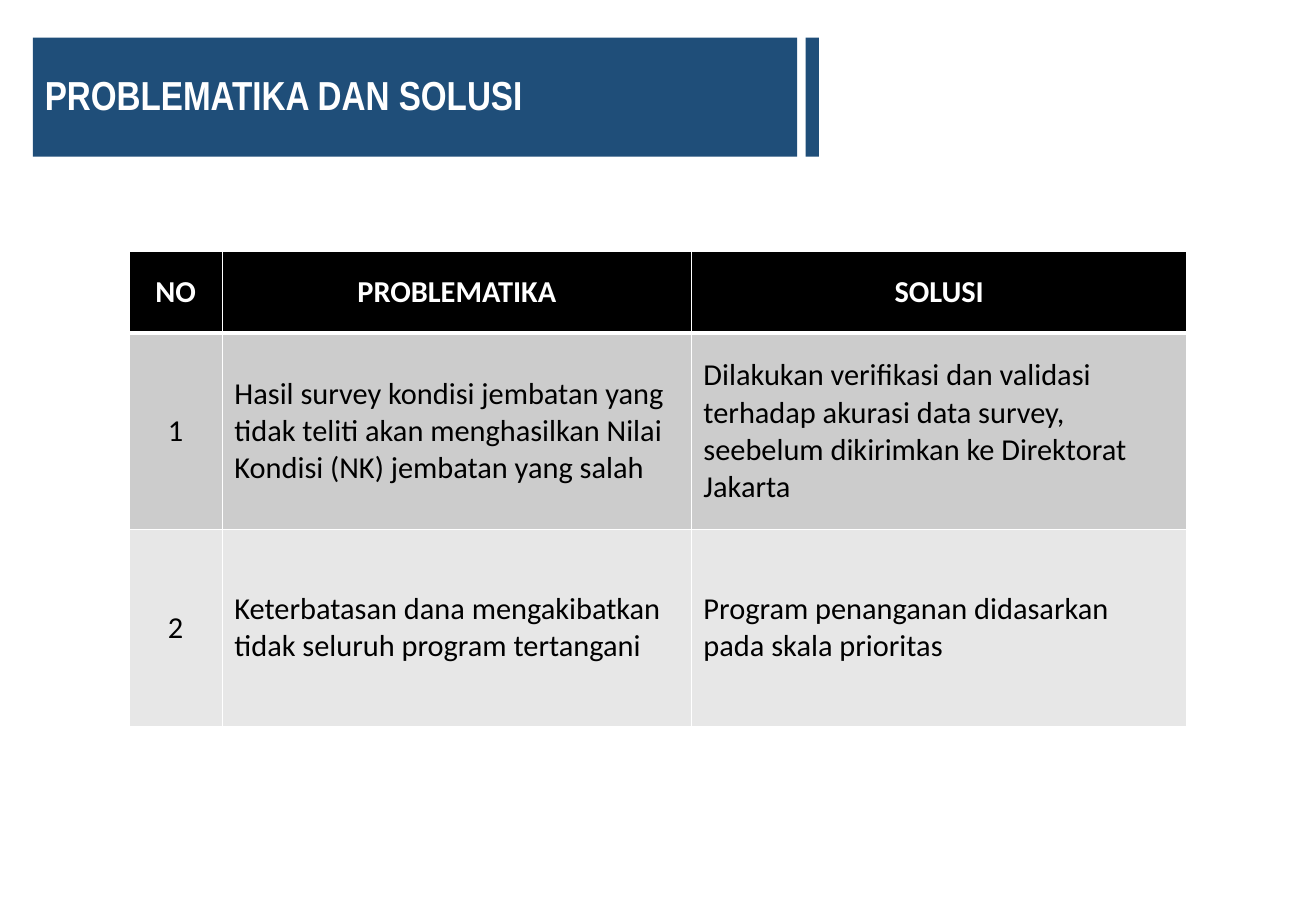
from dataclasses import dataclass

from lxml.etree import SubElement
from pptx import Presentation
from pptx.dml.color import RGBColor
from pptx.enum.shapes import MSO_SHAPE
from pptx.enum.text import MSO_ANCHOR, PP_ALIGN
from pptx.oxml.ns import qn
from pptx.util import Inches, Pt


@dataclass(frozen=True)
class Theme:
    """Colours, fonts and type sizes of the slide."""
    banner: str = "1F4E79"
    light: str = "FFFFFF"
    dark: str = "000000"
    row_fills: tuple = ("000000", "CCCCCC", "E7E7E7")
    title_font: str = "Arial Narrow"
    body_font: str = "Calibri"
    title_size: int = 24
    body_size: int = 18
    thin_line: int = 1
    header_line: int = 3


def write_text(frame, text, font, size, color, bold=False, align=PP_ALIGN.LEFT, spacing=1.0):
    """Put one formatted paragraph into a text frame."""
    frame.word_wrap = True
    para = frame.paragraphs[0]
    para.alignment = align
    para.line_spacing = spacing
    span = para.add_run()
    span.text = text
    span.font.name = font
    span.font.size = Pt(size)
    span.font.bold = bold
    span.font.color.rgb = RGBColor.from_string(color)


def draw_border(cell, side, width, color):
    """Add a solid line to one side of a table cell."""
    properties = cell._tc.get_or_add_tcPr()
    line = SubElement(properties, qn(f"a:ln{side}"), w=str(Pt(width)))
    fill = SubElement(line, qn("a:solidFill"))
    SubElement(fill, qn("a:srgbClr"), val=color)


class SlideBuilder:
    """Draws styled elements on the current slide."""

    def __init__(self, page, theme):
        """Keep the slide and its style."""
        self.page = page
        self.theme = theme

    def bar(self, left, top, width, height):
        """Draw a plain banner rectangle."""
        box = self.page.shapes.add_shape(
            MSO_SHAPE.RECTANGLE, Inches(left), Inches(top), Inches(width), Inches(height))
        box.shadow.inherit = False
        box.fill.solid()
        box.fill.fore_color.rgb = RGBColor.from_string(self.theme.banner)
        box.line.fill.background()
        return box

    def title(self, text, left, top, width, height):
        """Draw a banner that carries the title."""
        frame = self.bar(left, top, width, height).text_frame
        frame.vertical_anchor = MSO_ANCHOR.MIDDLE
        write_text(frame, text, self.theme.title_font, self.theme.title_size,
                   self.theme.light, bold=True, spacing=0.9)

    def cell(self, cell, text, row, column):
        """Style and fill one table cell."""
        theme = self.theme
        header = row == 0
        widths = {"L": theme.thin_line, "R": theme.thin_line,
                  "T": theme.header_line if row == 1 else theme.thin_line,
                  "B": theme.header_line if header else theme.thin_line}
        for side, width in widths.items():
            draw_border(cell, side, width, theme.light)
        cell.fill.solid()
        cell.fill.fore_color.rgb = RGBColor.from_string(theme.row_fills[row])
        cell.vertical_anchor = MSO_ANCHOR.MIDDLE
        centred = header or column == 0
        write_text(cell.text_frame, text, theme.body_font, theme.body_size,
                   theme.light if header else theme.dark, bold=header,
                   align=PP_ALIGN.CENTER if centred else PP_ALIGN.LEFT)

    def table(self, rows, left, top, widths, heights):
        """Draw a table with a header row."""
        table = self.page.shapes.add_table(
            len(heights), len(widths), Inches(left), Inches(top),
            Inches(sum(widths)), Inches(sum(heights))).table
        for column, width in zip(table.columns, widths):
            column.width = Inches(width)
        for line, height in zip(table.rows, heights):
            line.height = Inches(height)
        for row, texts in enumerate(rows):
            for column, text in enumerate(texts):
                self.cell(table.cell(row, column), text, row, column)


ROWS = [
    ("NO", "PROBLEMATIKA", "SOLUSI"),
    ("1",
     "Hasil survey kondisi jembatan yang tidak teliti akan menghasilkan "
     "Nilai Kondisi (NK) jembatan yang salah",
     "Dilakukan verifikasi dan validasi terhadap akurasi data survey, "
     "seebelum dikirimkan ke Direktorat Jakarta"),
    ("2",
     "Keterbatasan dana mengakibatkan tidak seluruh program tertangani",
     "Program penanganan didasarkan pada skala prioritas"),
]


def main():
    """Build and save the slide."""
    deck = Presentation()
    deck.slide_width = Inches(10.83)
    deck.slide_height = Inches(7.5)
    page = deck.slides.add_slide(deck.slide_layouts[6])
    builder = SlideBuilder(page, Theme())
    builder.title("PROBLEMATIKA DAN SOLUSI", 0.27, 0.31, 6.29, 0.98)
    builder.table(ROWS, 1.06, 2.07, (0.77, 3.86, 4.08), (0.67, 1.62, 1.62))
    builder.bar(6.63, 0.31, 0.11, 0.98)
    deck.save("out.pptx")


if __name__ == "__main__":
    main()
